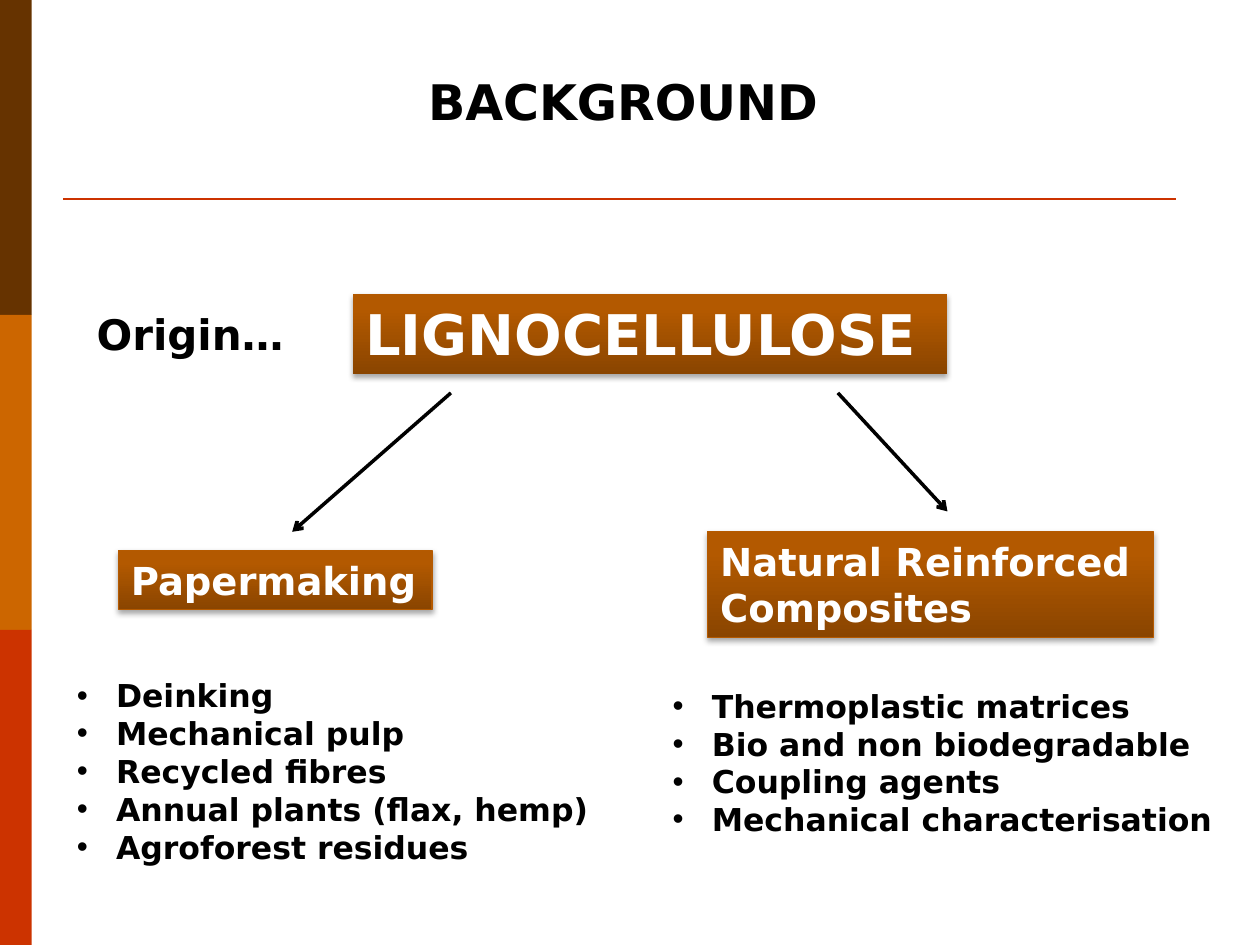
from lxml.etree import SubElement
from pptx import Presentation
from pptx.dml.color import RGBColor
from pptx.enum.shapes import MSO_CONNECTOR, MSO_SHAPE
from pptx.enum.text import MSO_ANCHOR, MSO_AUTO_SIZE, PP_ALIGN
from pptx.oxml import parse_xml
from pptx.oxml.ns import nsdecls, qn
from pptx.util import Cm, Pt

GRADIENT = f"""<a:gradFill {nsdecls('a')} rotWithShape="1"><a:gsLst>
<a:gs pos="0"><a:srgbClr val="8A4500"/></a:gs>
<a:gs pos="80000"><a:srgbClr val="B35900"/></a:gs>
<a:gs pos="100000"><a:srgbClr val="B45A00"/></a:gs>
</a:gsLst><a:lin ang="16200000" scaled="0"/></a:gradFill>"""
SHADOW = f"""<a:outerShdw {nsdecls('a')} blurRad="40000" dist="23000" dir="5400000"
rotWithShape="0"><a:srgbClr val="000000"><a:alpha val="35000"/></a:srgbClr></a:outerShdw>"""


def rgb(value):
    return RGBColor.from_string(value)


def write(s, lines, size, color, wrap, bullets=False):
    """Put bold lines into a shape, one paragraph each."""
    tf = s.text_frame
    frame = {"word_wrap": wrap, "auto_size": MSO_AUTO_SIZE.SHAPE_TO_FIT_TEXT,
             "vertical_anchor": MSO_ANCHOR.TOP}
    for name, value in frame.items():
        setattr(tf, name, value)
    for i, line in enumerate(lines):
        p = tf.add_paragraph() if i else tf.paragraphs[0]
        p.alignment = PP_ALIGN.LEFT
        if bullets:
            pPr = p._p.get_or_add_pPr()
            pPr.set("marL", str(Cm(0.79)))
            pPr.set("indent", str(-Cm(0.79)))
            SubElement(pPr, qn("a:buFont"), typeface="Arial")
            SubElement(pPr, qn("a:buChar"), char="•")
        r = p.add_run()
        r.text = line
        font = {"name": "DejaVu Sans", "size": Pt(size), "bold": True}
        for name, value in font.items():
            setattr(r.font, name, value)
        r.font.color.rgb = rgb(color)


prs = Presentation()
prs.slide_width, prs.slide_height = Cm(25.4), Cm(19.05)
shapes = prs.slides.add_slide(prs.slide_layouts[6]).shapes

# Side bands
for i, color in enumerate(["663300", "CC6600", "CC3300"]):
    s = shapes.add_shape(MSO_SHAPE.RECTANGLE, 0, Cm(6.35 * i), Cm(0.64), Cm(6.35))
    s.shadow.inherit = False
    s.fill.solid()
    s.fill.fore_color.rgb = rgb(color)
    s.line.fill.background()

# Title rule and arrows
for ends, color, width, arrow in [
    ((1.27, 4.01, 23.7, 4.01), "CC3300", 1.5, False),
    ((9.09, 7.92, 5.89, 10.72), "000000", 2, True),
    ((16.89, 7.92, 19.1, 10.31), "000000", 2, True),
]:
    s = shapes.add_connector(MSO_CONNECTOR.STRAIGHT, *map(Cm, ends))
    s.line.color.rgb = rgb(color)
    s.line.width = Pt(width)
    if arrow:
        SubElement(s.line._get_or_add_ln(), qn("a:tailEnd"), type="arrow")
    SubElement(s._element.spPr, qn("a:effectLst"))

# Gradient boxes
for box, lines, size, wrap, outlined in [
    ((7.11, 5.92, 11.99, 1.62), ["LIGNOCELLULOSE"], 32, True, False),
    ((2.39, 11.1, 6.32, 1.19), ["Papermaking"], 22, False, True),
    ((14.27, 10.72, 8.99, 2.13), ["Natural Reinforced", "Composites"], 22, True, True),
]:
    s = shapes.add_shape(MSO_SHAPE.RECTANGLE, *map(Cm, box))
    spPr = s._element.spPr
    spPr.append(parse_xml(GRADIENT))
    if outlined:
        s.line.color.rgb = rgb("B55A00")
        s.line.width = Pt(0.75)
    else:
        s.line.fill.background()
    s.shadow.inherit = False
    spPr.find(qn("a:effectLst")).append(parse_xml(SHADOW))
    write(s, lines, size, "FFFFFF", wrap)

# Plain texts and bullet lists
for box, lines, size, bullets in [
    ((8.38, 1.32, 8.46, 1.45), ["BACKGROUND"], 28, False),
    ((1.7, 6.1, 4.34, 1.27), ["Origin…"], 24, False),
    ((1.3, 13.51, 11.15, 4.11),
     ["Deinking", "Mechanical pulp", "Recycled fibres",
      "Annual plants (flax, hemp)", "Agroforest residues"], 18, True),
    ((13.31, 13.72, 11.99, 3.33),
     ["Thermoplastic matrices", "Bio and non biodegradable",
      "Coupling agents", "Mechanical characterisation"], 18, True),
]:
    s = shapes.add_textbox(*map(Cm, box))
    write(s, lines, size, "000000", bullets, bullets)

prs.save("out.pptx")
